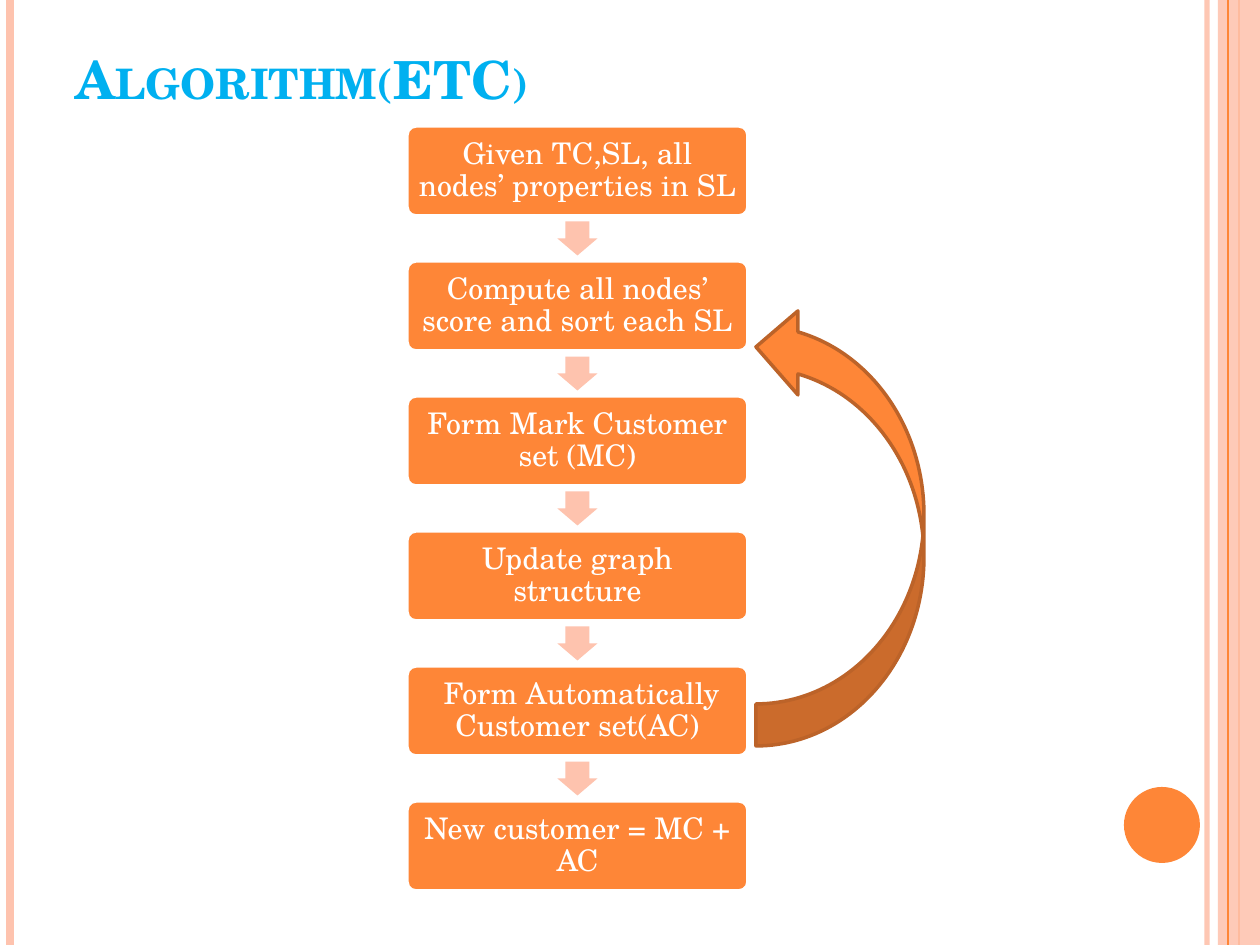
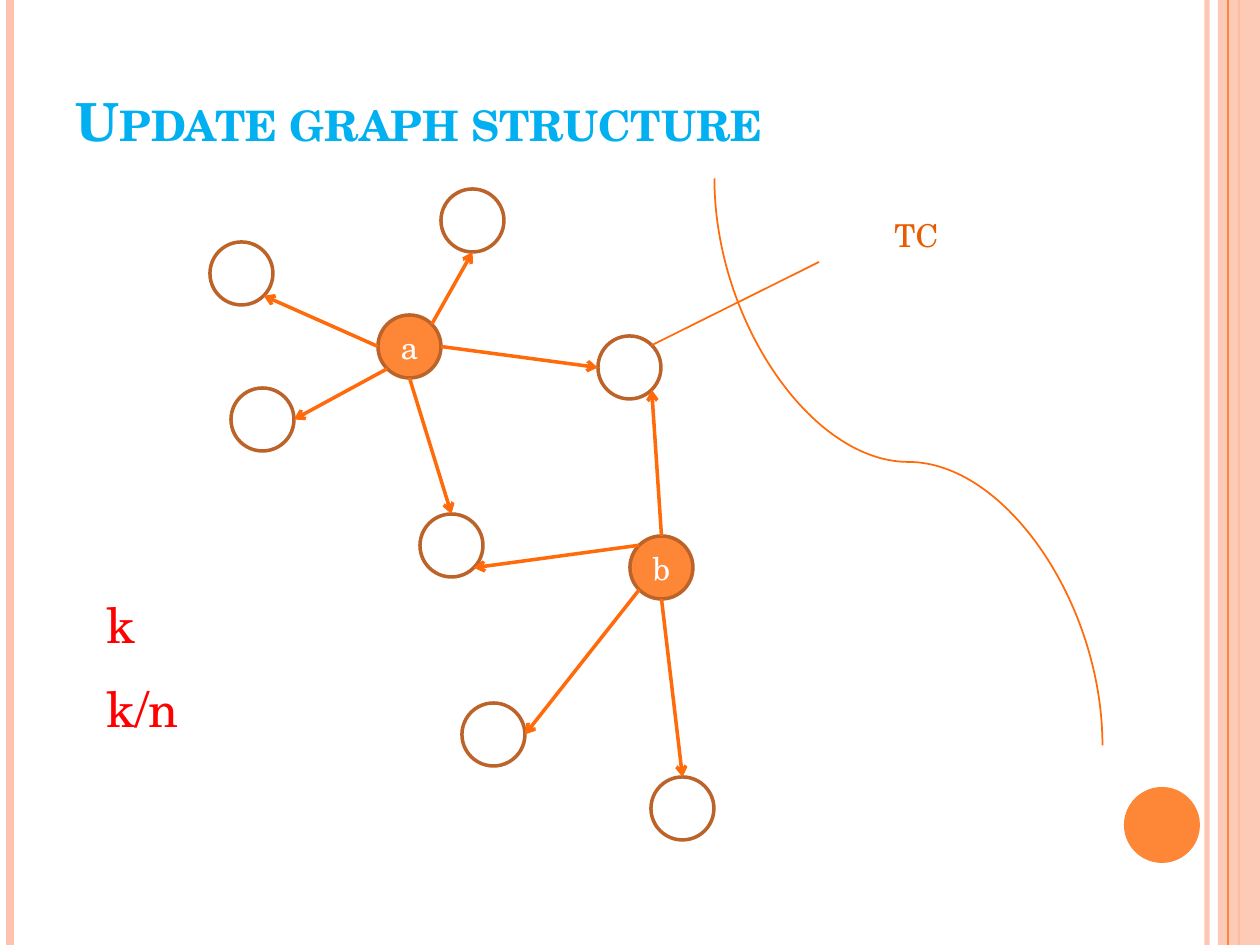
from dataclasses import dataclass
from math import cos, radians, sin

from lxml.etree import SubElement
from pptx import Presentation
from pptx.dml.color import RGBColor
from pptx.enum.shapes import MSO_CONNECTOR, MSO_SHAPE
from pptx.enum.text import MSO_ANCHOR, MSO_AUTO_SIZE, PP_ALIGN
from pptx.oxml.ns import qn
from pptx.util import Pt

EMU_PER_PX = 914400 / 126
SLIDE_WIDTH, SLIDE_HEIGHT = 1260, 945
TITLE_ONLY = 5


@dataclass(frozen=True)
class Theme:
    font: str = "TeX Gyre Schola"
    orange: str = "FE8637"
    peach: str = "FEC3AE"
    brown: str = "BC6329"
    edge: str = "FF6B0A"
    label: str = "E75C01"
    title: str = "00B0F0"
    red: str = "FF0000"
    white: str = "FFFFFF"
    title_size: int = 30
    formula_size: int = 28
    body_size: int = 18
    step_size: int = 17


THEME = Theme()

# Flow chart grid
STEPS = (
    "Given TC,SL, all nodes’ properties in SL",
    "Compute all nodes’ score and sort each SL",
    "Form Mark Customer set (MC)",
    "Update graph structure",
    " Form Automatically Customer set(AC)",
    "New customer = MC + AC",
)
STEP_LEFT, STEP_TOP, STEP_WIDTH, STEP_HEIGHT, STEP_PITCH = 407, 126, 341, 90, 135
ARROW_WIDTH, ARROW_HEIGHT = 40, 34

# Graph: top left corner of each node, then the edges between compass points
NODE_SIZE = 63
NODES = {
    "a": (378, 315),
    "b": (630, 536),
    "shared": (420, 514),
    "upper left": (210, 242),
    "left": (231, 388),
    "lower left": (462, 703),
    "bottom": (651, 777),
    "top": (441, 189),
    "target": (598, 336),
}
EDGES = (
    ("a", "NE", "top", "S"),
    ("a", "W", "upper left", "SE"),
    ("a", "SW", "left", "E"),
    ("a", "S", "shared", "N"),
    ("a", "E", "target", "W"),
    ("b", "NW", "shared", "SE"),
    ("b", "SW", "lower left", "E"),
    ("b", "S", "bottom", "N"),
    ("b", "N", "target", "SE"),
)
COMPASS = ("E", "SE", "S", "SW", "W", "NW", "N", "NE")


def px(*lengths):
    return [round(length * EMU_PER_PX) for length in lengths]


def write_text(shape, text, size, color, bold=False, small_caps=False,
               align=PP_ALIGN.LEFT, anchor=MSO_ANCHOR.TOP, inset=None,
               line_spacing=None):
    frame = shape.text_frame
    frame.word_wrap = True
    frame.auto_size = MSO_AUTO_SIZE.NONE
    frame.vertical_anchor = anchor
    if inset is not None:
        margin, = px(inset)
        frame.margin_left = frame.margin_right = margin
        frame.margin_top = frame.margin_bottom = margin
    paragraph = frame.paragraphs[0]
    paragraph.alignment = align
    paragraph.line_spacing = line_spacing
    run = paragraph.add_run()
    run.text = text
    run.font.name = THEME.font
    run.font.size = Pt(size)
    run.font.bold = bold
    run.font.color.rgb = RGBColor.from_string(color)
    if small_caps:
        run.font._element.set("cap", "small")


def set_opacity(shape, percent):
    for color in list(shape._element.spPr.iter(qn("a:srgbClr"))):
        SubElement(color, qn("a:alpha"), val=str(percent * 1000))


def add_figure(slide, kind, box, fill, line=None, line_width=2, adjustments=()):
    shape = slide.shapes.add_shape(kind, *px(*box))
    shape.shadow.inherit = False
    shape.fill.solid()
    shape.fill.fore_color.rgb = RGBColor.from_string(fill)
    if line:
        shape.line.color.rgb = RGBColor.from_string(line)
        shape.line.width = Pt(line_width)
    else:
        shape.line.fill.background()
    for index, value in enumerate(adjustments):
        shape.adjustments[index] = value
    return shape


def add_line(slide, start, end, color, width, kind=MSO_CONNECTOR.STRAIGHT, arrow=False):
    connector = slide.shapes.add_connector(kind, *px(*start, *end))
    connector.line.color.rgb = RGBColor.from_string(color)
    connector.line.width = Pt(width)
    properties = connector._element.spPr
    if arrow:
        SubElement(properties.find(qn("a:ln")), qn("a:tailEnd"), type="arrow")
    SubElement(properties, qn("a:effectLst"))
    return connector


def add_label(slide, text, box, size, color):
    write_text(slide.shapes.add_textbox(*px(*box)), text, size, color)


def add_titled_slide(presentation, title, title_height):
    slide = presentation.slides.add_slide(presentation.slide_layouts[TITLE_ONLY])
    placeholder = slide.shapes.title
    placeholder.left, placeholder.top, placeholder.width, placeholder.height = px(
        63, 38, 1029, title_height)
    write_text(placeholder, title, THEME.title_size, THEME.title, bold=True,
               small_caps=True, anchor=MSO_ANCHOR.BOTTOM)
    return slide


def add_bands(slide):
    """Draw the side bands and move them to the layout, shared by all slides."""
    def band_line(x, color, width):
        return add_line(slide, (x, 0), (x, SLIDE_HEIGHT), color, width)

    inner = band_line(1207, THEME.peach, 3)
    set_opacity(inner, 93)
    bands = [inner, band_line(10, THEME.peach, 4.5), band_line(1239, THEME.orange, 1.5)]
    side = add_figure(slide, MSO_SHAPE.RECTANGLE, (1218, 0, 42, SLIDE_HEIGHT), THEME.peach)
    set_opacity(side, 87)
    bands += [
        side,
        band_line(1228, THEME.orange, 0.75),
        add_figure(slide, MSO_SHAPE.OVAL, (1124, 787, 76, 76), THEME.orange),
    ]
    for band in bands:
        slide.slide_layout.shapes._spTree.append(band._element)


def add_step(slide, index, text):
    top = STEP_TOP + index * STEP_PITCH
    box = add_figure(slide, MSO_SHAPE.ROUNDED_RECTANGLE,
                     (STEP_LEFT, top, STEP_WIDTH, STEP_HEIGHT),
                     THEME.orange, THEME.white, adjustments=(0.1,))
    write_text(box, text, THEME.step_size, THEME.white, align=PP_ALIGN.CENTER,
               anchor=MSO_ANCHOR.MIDDLE, inset=8, line_spacing=0.9)
    if index < len(STEPS) - 1:
        arrow_left = STEP_LEFT + (STEP_WIDTH - ARROW_WIDTH) / 2
        arrow_top = top + STEP_HEIGHT + (STEP_PITCH - STEP_HEIGHT - ARROW_HEIGHT) / 2
        add_figure(slide, MSO_SHAPE.DOWN_ARROW,
                   (arrow_left, arrow_top, ARROW_WIDTH, ARROW_HEIGHT),
                   THEME.peach, adjustments=(0.6, 0.5))


def add_loop_arrow(slide):
    loop = add_figure(slide, MSO_SHAPE.CURVED_RIGHT_ARROW, (756, 305, 168, 441),
                      THEME.orange, THEME.brown)
    transform = loop._element.spPr.find(qn("a:xfrm"))
    transform.set("flipH", "1")
    transform.set("flipV", "1")


def add_node(slide, name):
    is_source = name in ("a", "b")
    node = add_figure(slide, MSO_SHAPE.OVAL, (*NODES[name], NODE_SIZE, NODE_SIZE),
                      THEME.orange if is_source else THEME.white, THEME.brown)
    if is_source:
        write_text(node, name, THEME.body_size, THEME.white, align=PP_ALIGN.CENTER,
                   anchor=MSO_ANCHOR.MIDDLE, inset=0)


def node_point(name, direction):
    angle = radians(45 * COMPASS.index(direction))
    left, top = NODES[name]
    radius = NODE_SIZE / 2
    return left + radius * (1 + cos(angle)), top + radius * (1 + sin(angle))


def add_boundary_curve(slide):
    curve = add_line(slide, (1192, 268), (625, 656), THEME.edge, 1,
                     kind=MSO_CONNECTOR.CURVE)
    curve._element.spPr.find(qn("a:xfrm")).set("rot", str(270 * 60000))


def build_algorithm_slide(presentation):
    slide = add_titled_slide(presentation, "Algorithm(ETC)", 78)
    add_bands(slide)
    for index, text in enumerate(STEPS):
        add_step(slide, index, text)
    add_loop_arrow(slide)


def build_graph_slide(presentation):
    slide = add_titled_slide(presentation, "Update graph structure", 120)
    add_boundary_curve(slide)
    for name in NODES:
        add_node(slide, name)
    for source, source_side, end, end_side in EDGES:
        add_line(slide, node_point(source, source_side), node_point(end, end_side),
                 THEME.edge, 2, arrow=True)
    add_line(slide, node_point("target", "NE"), (819, 262), THEME.edge, 1)
    add_label(slide, "TC", (882, 210, 136, 50), THEME.body_size, THEME.label)
    add_label(slide, "k", (94, 588, 158, 72), THEME.formula_size, THEME.red)
    add_label(slide, "k/n", (94, 672, 116, 72), THEME.formula_size, THEME.red)


def main():
    presentation = Presentation()
    presentation.slide_width, presentation.slide_height = px(SLIDE_WIDTH, SLIDE_HEIGHT)
    build_algorithm_slide(presentation)
    build_graph_slide(presentation)
    presentation.save("out.pptx")


if __name__ == "__main__":
    main()
